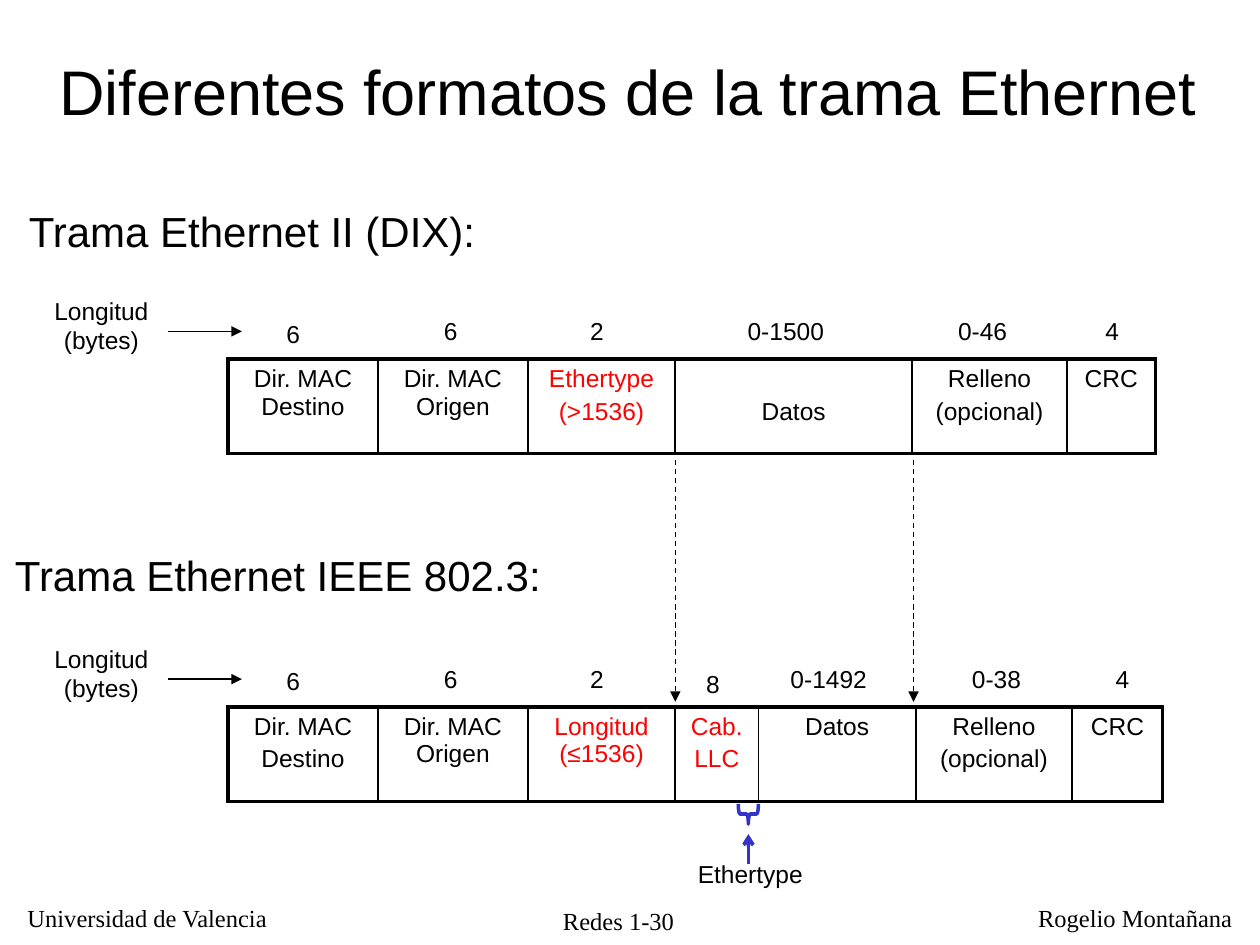
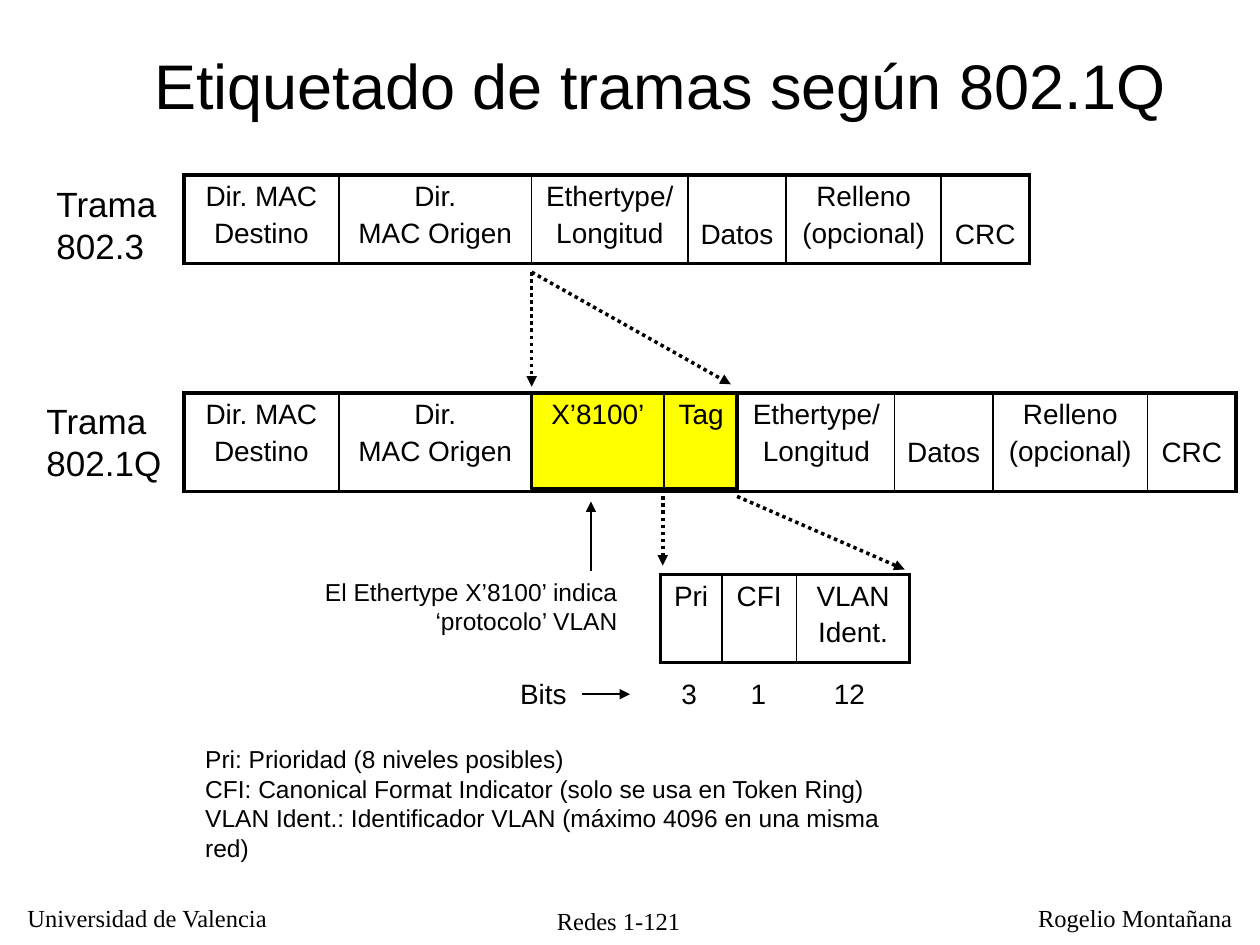
"""Build two slides on Ethernet frame formats and 802.1Q tagging."""
from dataclasses import dataclass
from typing import Optional

from lxml import etree
from pptx import Presentation
from pptx.dml.color import RGBColor
from pptx.enum.dml import MSO_LINE
from pptx.enum.shapes import MSO_CONNECTOR, MSO_SHAPE
from pptx.enum.text import MSO_ANCHOR, PP_ALIGN
from pptx.oxml.ns import qn
from pptx.util import Inches, Pt


@dataclass(frozen=True)
class Theme:
    black: str = "000000"
    red: str = "FF0000"
    yellow: str = "FFFF00"
    blue: str = "3333CC"
    sans: str = "Arial"
    serif: str = "Times New Roman"
    title: int = 36
    heading: int = 24
    side_heading: int = 20
    large: int = 16
    body: int = 14
    outer_border: float = 2.25
    inner_border: float = 1


THEME = Theme()


@dataclass(frozen=True)
class Label:
    left: float
    top: float
    width: float
    height: float
    lines: tuple[str, ...]
    size: int = THEME.body
    align: PP_ALIGN = PP_ALIGN.LEFT
    font: str = THEME.sans
    wrap: bool = False
    anchor: MSO_ANCHOR = MSO_ANCHOR.TOP


@dataclass(frozen=True)
class Arrow:
    start: tuple[float, float]
    end: tuple[float, float]
    width: float = 0.75
    color: str = THEME.black
    dash: Optional[MSO_LINE] = None
    head: str = "triangle"


@dataclass(frozen=True)
class Field:
    width: float
    lines: tuple[str, ...]
    color: str = THEME.black
    second_line: bool = False


@dataclass(frozen=True)
class Frame:
    left: float
    top: float
    height: float
    size: int
    fields: tuple[Field, ...]


@dataclass(frozen=True)
class ByteCount:
    center: float
    text: str
    width: float = 0.31
    rise: float = 0.39


def add_run(paragraph, text: str, size: int, font: str, color: str) -> None:
    run = paragraph.add_run()
    run.text = text
    run.font.size = Pt(size)
    run.font.name = font
    run.font.color.rgb = RGBColor.from_string(color)


def write_lines(text_frame, lines: tuple[str, ...], size: int, align: PP_ALIGN,
                font: str = THEME.sans, color: str = THEME.black, gap: float = 0) -> None:
    for index, line in enumerate(lines):
        paragraph = text_frame.add_paragraph() if index else text_frame.paragraphs[0]
        paragraph.alignment = align
        if index and gap:
            paragraph.space_before = Pt(gap)
        add_run(paragraph, line, size, font, color)


def add_label(slide, label: Label) -> None:
    box = slide.shapes.add_textbox(Inches(label.left), Inches(label.top),
                                   Inches(label.width), Inches(label.height))
    box.text_frame.word_wrap = label.wrap
    box.text_frame.vertical_anchor = label.anchor
    write_lines(box.text_frame, label.lines, label.size, label.align, label.font)


def add_arrow(slide, arrow: Arrow) -> None:
    points = [Inches(value) for value in (*arrow.start, *arrow.end)]
    connector = slide.shapes.add_connector(MSO_CONNECTOR.STRAIGHT, *points)
    connector.line.width = Pt(arrow.width)
    connector.line.color.rgb = RGBColor.from_string(arrow.color)
    if arrow.dash is not None:
        connector.line.dash_style = arrow.dash
    etree.SubElement(connector.line._get_or_add_ln(), qn("a:tailEnd"), type=arrow.head)
    etree.SubElement(connector._element.spPr, qn("a:effectLst"))


def set_borders(cell, is_first: bool, is_last: bool) -> None:
    outer, inner = THEME.outer_border, THEME.inner_border
    widths = {"a:lnL": outer if is_first else inner, "a:lnR": outer if is_last else inner,
              "a:lnT": outer, "a:lnB": outer}
    properties = cell._tc.get_or_add_tcPr()
    for index, (tag, width) in enumerate(widths.items()):
        line = etree.Element(qn(tag), w=str(Pt(width)))
        fill = etree.SubElement(line, qn("a:solidFill"))
        etree.SubElement(fill, qn("a:srgbClr"), val=THEME.black)
        properties.insert(index, line)


def add_frame(slide, frame: Frame) -> None:
    count = len(frame.fields)
    total = sum(field.width for field in frame.fields)
    table = slide.shapes.add_table(1, count, Inches(frame.left), Inches(frame.top),
                                   Inches(total), Inches(frame.height)).table
    table.first_row = table.horz_banding = False
    for index, field in enumerate(frame.fields):
        table.columns[index].width = Inches(field.width)
        cell = table.cell(0, index)
        cell.fill.background()
        cell.margin_left = cell.margin_right = Inches(0.05)
        line_drop = Pt(1.35 * frame.size) if field.second_line else 0
        cell.margin_top = Inches(0.05) + line_drop
        write_lines(cell.text_frame, field.lines, frame.size, PP_ALIGN.CENTER,
                    color=field.color, gap=0.2 * frame.size)
        set_borders(cell, index == 0, index == count - 1)


def add_shape(slide, kind: MSO_SHAPE, left: float, top: float, width: float, height: float,
              line_color: str, fill_color: Optional[str] = None):
    shape = slide.shapes.add_shape(kind, Inches(left), Inches(top), Inches(width), Inches(height))
    shape.shadow.inherit = False
    shape.line.color.rgb = RGBColor.from_string(line_color)
    shape.line.width = Pt(2)
    if fill_color:
        shape.fill.solid()
        shape.fill.fore_color.rgb = RGBColor.from_string(fill_color)
    else:
        shape.fill.background()
    return shape


def add_base_slide(presentation, title: Label, page: str):
    slide = presentation.slides.add_slide(presentation.slide_layouts[6])
    footers = (
        Label(4.26, 7.14, 1.3, 0.3, (f"Redes {page}",), align=PP_ALIGN.CENTER, font=THEME.serif),
        Label(0.12, 7.12, 2.13, 0.33, ("Universidad de Valencia",), font=THEME.serif),
        Label(8.14, 7.12, 1.74, 0.33, ("Rogelio Montañana",), font=THEME.serif),
    )
    for label in (*footers, title):
        add_label(slide, label)
    return slide


def add_measured_frame(slide, heading: Label, frame: Frame, counts: tuple[ByteCount, ...]) -> None:
    add_label(slide, heading)
    add_frame(slide, frame)
    add_label(slide, Label(0.33, frame.top - 0.55, 0.95, 0.57, ("Longitud", "(bytes)"),
                           align=PP_ALIGN.CENTER))
    add_arrow(slide, Arrow((1.33, frame.top - 0.22), (1.92, frame.top - 0.22)))
    common = (ByteCount(2.33, "6", rise=0.37), ByteCount(3.58, "6"), ByteCount(4.74, "2"))
    for count in (*common, *counts):
        add_label(slide, Label(count.center - count.width / 2, frame.top - count.rise,
                               count.width, 0.34, (count.text,)))


def build_formats_slide(presentation) -> None:
    title = Label(0.36, 0.37, 9.25, 0.88, ("Diferentes formatos de la trama Ethernet",),
                  THEME.title, PP_ALIGN.CENTER)
    slide = add_base_slide(presentation, title, "1-30")
    origin = Field(1.19, ("Dir. MAC Origen",))
    padding = ("Relleno", "(opcional)")

    dix = Frame(1.81, 2.85, 0.75, THEME.body, (
        Field(1.19, ("Dir. MAC Destino",)), origin,
        Field(1.17, ("Ethertype", "(>1536)"), THEME.red),
        Field(1.88, ("Datos",), second_line=True),
        Field(1.23, padding), Field(0.7, ("CRC",))))
    add_measured_frame(
        slide, Label(0.13, 1.58, 3.78, 0.51, ("Trama Ethernet II (DIX):",), THEME.heading), dix,
        (ByteCount(6.24, "0-1500", 0.81), ByteCount(7.8, "0-46", 0.59), ByteCount(8.83, "4")))

    ieee = Frame(1.81, 5.61, 0.75, THEME.body, (
        Field(1.19, ("Dir. MAC", "Destino")), origin,
        Field(1.17, ("Longitud (≤1536)",), THEME.red),
        Field(0.66, ("Cab.", "LLC"), THEME.red), Field(1.25, ("Datos",)),
        Field(1.24, padding), Field(0.72, ("CRC",))))
    add_measured_frame(
        slide, Label(0.02, 4.31, 4.42, 0.51, ("Trama Ethernet IEEE 802.3:",), THEME.heading), ieee,
        (ByteCount(5.66, "8", rise=0.35), ByteCount(6.58, "0-1492", 0.81),
         ByteCount(7.91, "0-38", 0.59), ByteCount(8.91, "4")))

    for data_edge in (5.36, 7.25):
        add_arrow(slide, Arrow((data_edge, 3.65), (data_edge, 5.57), dash=MSO_LINE.DASH))
    brace = add_shape(slide, MSO_SHAPE.LEFT_BRACE, 5.86, 6.38, 0.16, 0.16, THEME.blue)
    brace.rotation = 270
    add_label(slide, Label(5.44, 6.77, 1.04, 0.34, ("Ethertype",)))
    add_arrow(slide, Arrow((5.94, 6.86), (5.94, 6.62), 2, THEME.blue, head="arrow"))


def build_tagging_slide(presentation) -> None:
    title = Label(0.99, 0.28, 8.5, 0.78, ("Etiquetado de tramas según 802.1Q",),
                  THEME.title, PP_ALIGN.CENTER, anchor=MSO_ANCHOR.MIDDLE)
    slide = add_base_slide(presentation, title, "1-121")
    addresses = (Field(1.23, ("Dir. MAC", "Destino")), Field(1.53, ("Dir.", "MAC Origen")))
    tag = (Field(1.05, ("X’8100’",)), Field(0.59, ("Tag",)))
    payload = (Field(1.24, ("Ethertype/", "Longitud")),
               Field(0.78, ("Datos",), second_line=True),
               Field(1.23, ("Relleno", "(opcional)")),
               Field(0.7, ("CRC",), second_line=True))
    tag_parts = (Field(0.49, ("Pri",)), Field(0.59, ("CFI",)), Field(0.9, ("VLAN", "Ident.")))

    add_shape(slide, MSO_SHAPE.RECTANGLE, 4.22, 3.12, 1.63, 0.76, THEME.black, THEME.yellow)
    for frame in (
        Frame(1.46, 3.12, 0.78, THEME.large, addresses + tag + payload),
        Frame(1.46, 1.39, 0.7, THEME.large, addresses + payload),
        Frame(5.24, 4.56, 0.7, THEME.large, tag_parts),
    ):
        add_frame(slide, frame)

    for start, end in (((5.26, 3.94), (5.26, 4.49)), ((5.85, 3.94), (7.18, 4.52)),
                       ((4.22, 2.16), (4.22, 3.07)), ((4.22, 2.16), (5.8, 3.05))):
        add_arrow(slide, Arrow(start, end, 2, dash=MSO_LINE.ROUND_DOT))
    add_arrow(slide, Arrow((4.69, 4.53), (4.69, 3.98), 1.5))
    add_arrow(slide, Arrow((4.62, 5.51), (5, 5.51), 1))

    for left, width, text in ((4.03, 0.57, "Bits"), (5.31, 0.32, "3"),
                              (5.86, 0.32, "1"), (6.52, 0.45, "12")):
        add_label(slide, Label(left, 5.32, width, 0.37, (text,), THEME.large))
    for label in (
        Label(0.35, 1.4, 1, 0.77, ("Trama", "802.3"), THEME.side_heading),
        Label(0.27, 3.12, 1.11, 0.77, ("Trama", "802.1Q"), THEME.side_heading),
        Label(2.48, 4.53, 2.52, 0.57, ("El Ethertype X’8100’ indica ‘protocolo’ VLAN",),
              align=PP_ALIGN.RIGHT, wrap=True),
        Label(1.53, 5.86, 5.92, 0.8, (
            "Pri: Prioridad (8 niveles posibles)",
            "CFI: Canonical Format Indicator (solo se usa en Token Ring)",
            "VLAN Ident.: Identificador VLAN (máximo 4096 en una misma red)"), wrap=True),
    ):
        add_label(slide, label)


def main() -> None:
    presentation = Presentation()
    presentation.slide_width = Inches(10)
    presentation.slide_height = Inches(7.5)
    build_formats_slide(presentation)
    build_tagging_slide(presentation)
    presentation.save("out.pptx")


if __name__ == "__main__":
    main()
